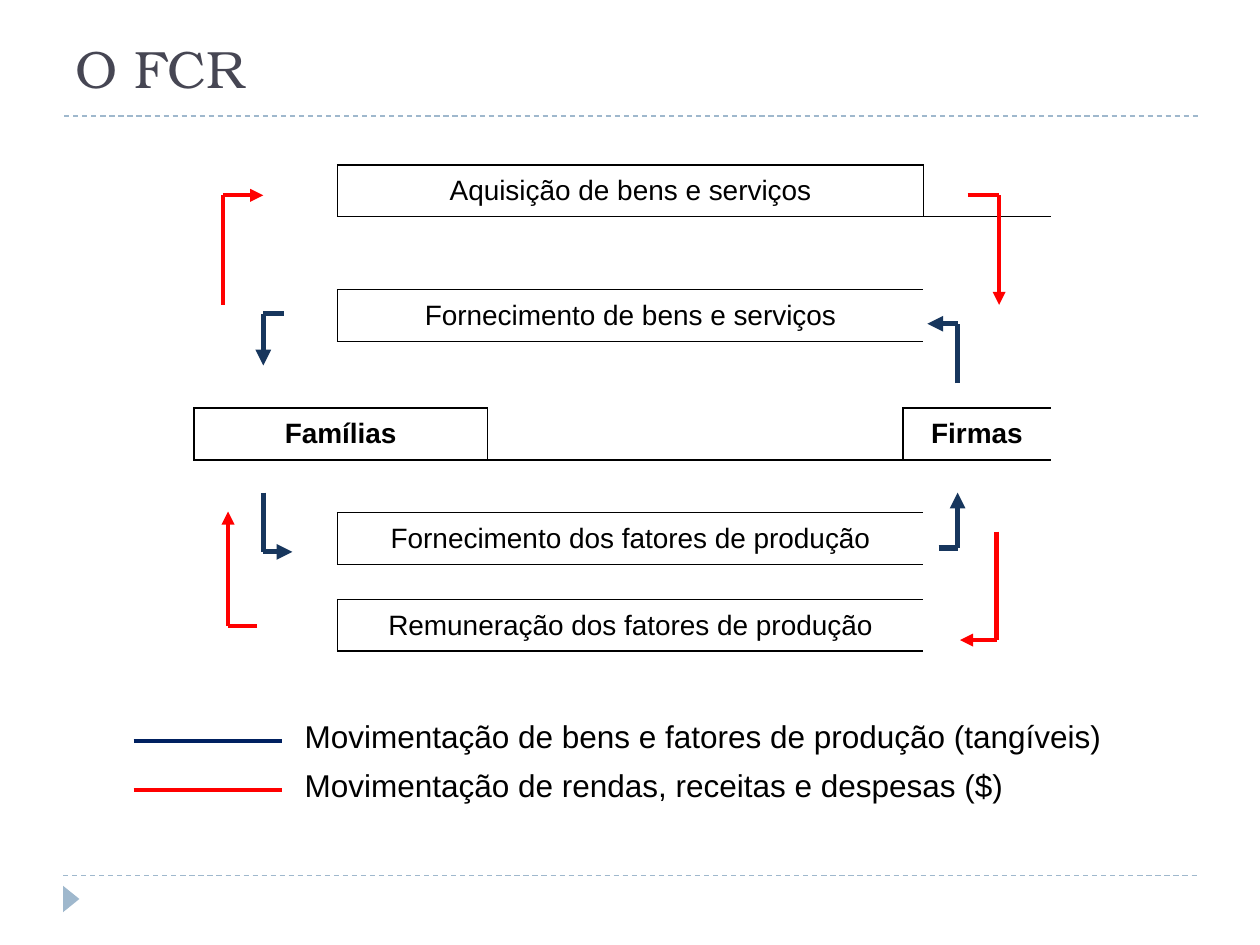
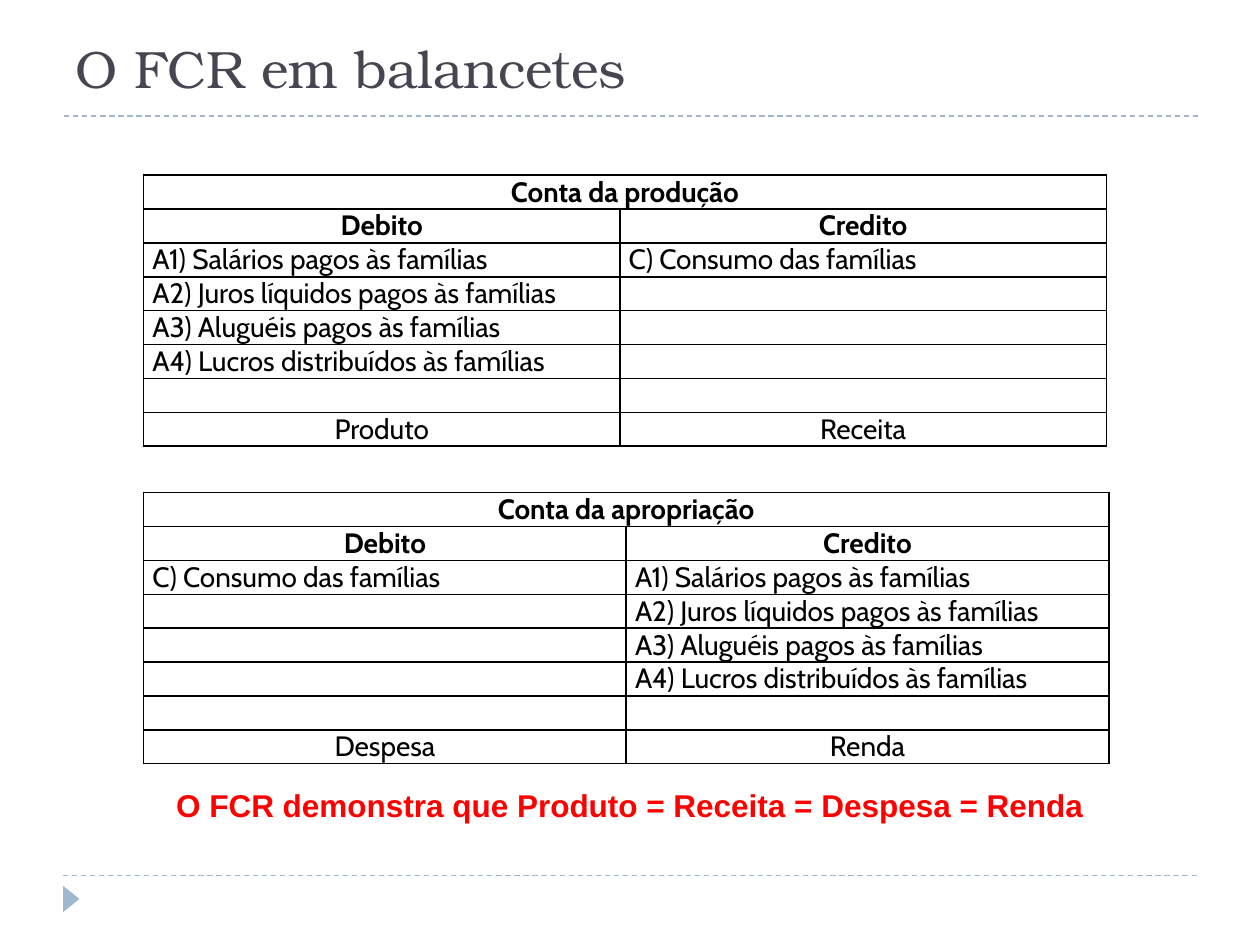
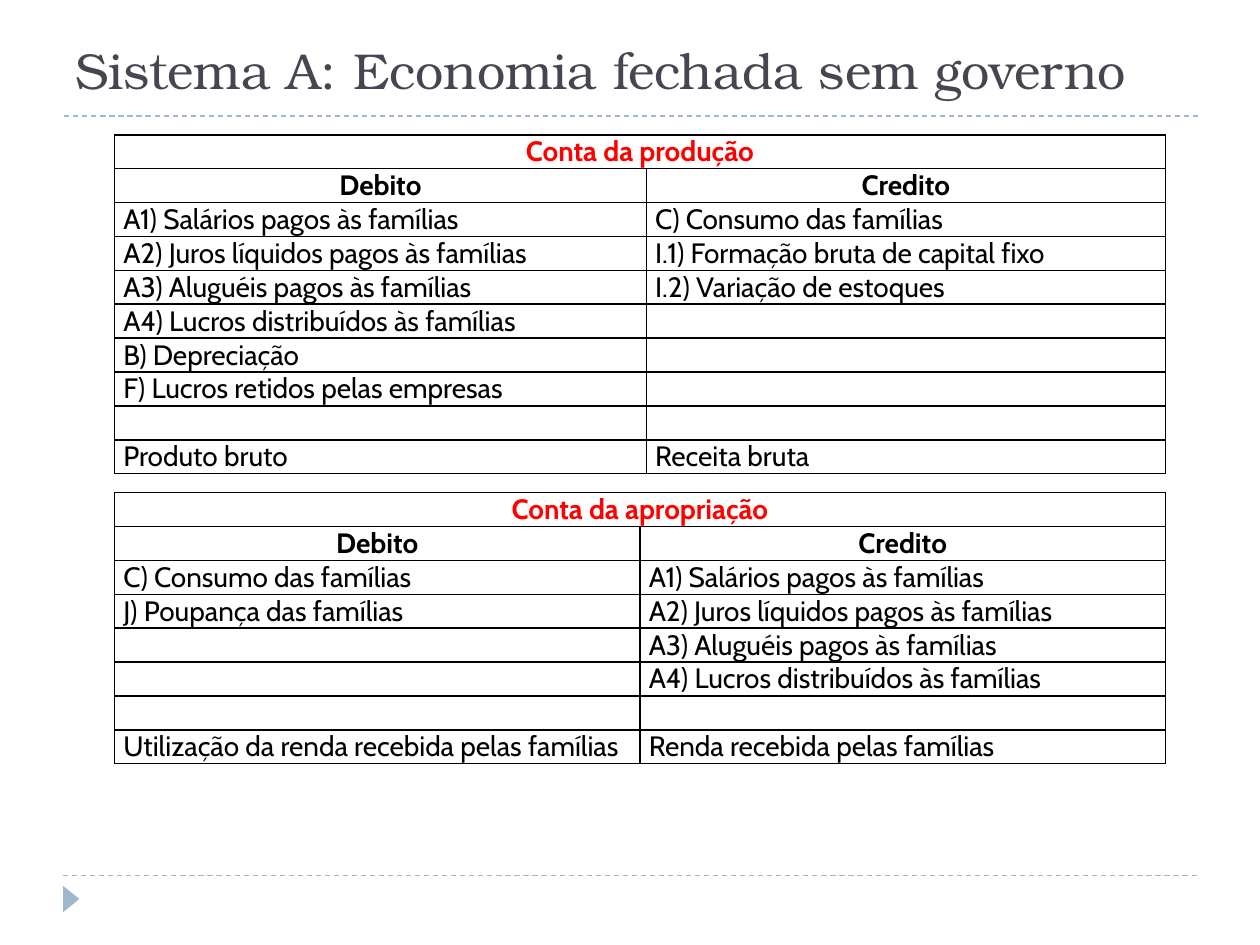
from lxml.etree import SubElement
from pptx import Presentation
from pptx.dml.color import RGBColor
from pptx.enum.dml import MSO_LINE
from pptx.enum.shapes import MSO_CONNECTOR, MSO_SHAPE
from pptx.enum.text import MSO_ANCHOR, MSO_AUTO_SIZE, PP_ALIGN
from pptx.oxml.ns import qn
from pptx.util import Inches, Pt

BLACK, RED, NAVY, DEEP = "000000", "FF0000", "17365D", "002060"
PALE, SLATE = "9FB8CD", "464653"
SERIF, SANS, CABIN = "TeX Gyre Bonum", "Arial", "Cabin"
SIDES = "LRTB"
MIRROR = {"L": (0, -1, "R"), "R": (0, 1, "L"), "T": (-1, 0, "B"), "B": (1, 0, "T")}
PAD = {"margin_left": Inches(0.07), "margin_right": Inches(0.07),
       "margin_top": 0, "margin_bottom": 0}
WAGES = ["A1) Salários pagos às famílias", "A2) Juros líquidos pagos às famílias",
         "A3) Aluguéis pagos às famílias", "A4) Lucros distribuídos às famílias"]
SPEND = "C) Consumo das famílias"


def tint(code):
    return RGBColor.from_string(code)


def apply(item, values):
    for name, value in values.items():
        setattr(item, name, value)


def write(para, text, size, face, color=BLACK, bold=False, align=PP_ALIGN.LEFT):
    para.alignment = align
    run = para.add_run()
    run.text = text
    apply(run.font, {"size": Pt(size), "name": face, "bold": bold})
    run.font.color.rgb = tint(color)


def draw_line(slide, start, end, color, width, arrow=False, dash=None):
    line = slide.shapes.add_connector(
        MSO_CONNECTOR.STRAIGHT, *[Inches(n) for n in (*start, *end)])
    apply(line.line, {"width": Pt(width), "dash_style": dash})
    line.line.color.rgb = tint(color)
    props = line.element.spPr
    if arrow:
        SubElement(props.find(qn("a:ln")), qn("a:tailEnd"), type="triangle")
    SubElement(props, qn("a:effectLst"))
    return line


def draw_bend(slide, color, width, start, turn, end):
    draw_line(slide, start, turn, color, width)
    draw_line(slide, turn, end, color, width, arrow=True)


def add_label(slide, left, top, width, text, color=BLACK, bold=False):
    box = slide.shapes.add_textbox(*[Inches(n) for n in (left, top, width, 0.4)])
    apply(box.text_frame, {"word_wrap": True, "auto_size": MSO_AUTO_SIZE.SHAPE_TO_FIT_TEXT})
    write(box.text_frame.paragraphs[0], text, 18, SANS, color, bold)


def add_title(slide, text, size=30):
    frame = slide.shapes.title.text_frame
    frame.vertical_anchor = MSO_ANCHOR.BOTTOM
    write(frame.paragraphs[0], text, size, SERIF, SLATE)


def set_layout(deck, layout):
    for holder in list(layout.placeholders):
        if holder.placeholder_format.idx:
            holder.element.getparent().remove(holder.element)
    apply(layout.placeholders[0], {"left": Inches(0.5), "top": Inches(0.17),
                                   "width": Inches(9), "height": Inches(0.67)})
    slide = deck.slides.add_slide(layout)
    parts = [draw_line(slide, (x, y), (x + 9, y), PALE, 0.75, dash=MSO_LINE.DASH)
             for x, y in ((0.5, 6.95), (0.51, 0.92))]
    mark = slide.shapes.add_shape(
        MSO_SHAPE.ISOSCELES_TRIANGLE, *[Inches(n) for n in (0.46, 7.07, 0.21, 0.13)])
    mark.rotation = 90
    mark.shadow.inherit = False
    mark.fill.solid()
    mark.fill.fore_color.rgb = tint(PALE)
    mark.line.fill.background()
    for part in parts + [mark]:
        layout.shapes.element.append(part.element)
    return slide


def format_cell(cell, edges, size, face):
    apply(cell, PAD)
    props = cell._tc.get_or_add_tcPr()
    for side in SIDES:
        line = SubElement(props, qn("a:ln" + side), w=str(Pt(1)))
        if side in edges:
            SubElement(SubElement(line, qn("a:solidFill")), qn("a:srgbClr"), val=BLACK)
        else:
            SubElement(line, qn("a:noFill"))
    cell.fill.background()
    para = cell.text_frame.paragraphs[0]
    if not para.runs:
        last = SubElement(para._p, qn("a:endParaRPr"), sz=str(size * 100))
        SubElement(last, qn("a:latin"), typeface=face)


def add_grid(slide, left, top, cols, rows):
    frame = slide.shapes.add_table(
        len(rows), len(cols), *[Inches(n) for n in (left, top, sum(cols), sum(rows))])
    table = frame.table
    apply(table, {"first_row": False, "horz_banding": False})
    for col, width in zip(table.columns, cols):
        col.width = Inches(width)
    for row, height in zip(table.rows, rows):
        row.height = Inches(height)
    return table


def add_account(slide, left, top, cols, name, debit, credit, total,
                color=BLACK, align=PP_ALIGN.CENTER):
    count = max(len(debit), len(credit)) + 1
    pairs = [[items[i] if i < len(items) else "" for items in (debit, credit)]
             for i in range(count)]
    lines = [(name, ""), ("Debito", "Credito"), *pairs, total]
    table = add_grid(slide, left, top, cols, [2.13 / 8] * len(lines))
    table.cell(0, 0).merge(table.cell(0, 1))
    for r, line in enumerate(lines):
        head = r < 2
        place = (PP_ALIGN.CENTER if head else
                 align if r == len(lines) - 1 else PP_ALIGN.JUSTIFY)
        for c, text in enumerate(line):
            cell = table.cell(r, c)
            if text:
                write(cell.text_frame.paragraphs[0], text, 16, CABIN,
                      BLACK if r else color, head, place)
            format_cell(cell, SIDES, 16, CABIN)


def add_flow(slide):
    boxes = [(0, 1, 4, "Aquisição de bens e serviços", True, False),
             (3, 1, 4, "Fornecimento de bens e serviços", False, False),
             (5, 0, 2, "Famílias", True, True),
             (5, 4, 5, "Firmas", True, True),
             (7, 1, 4, "Fornecimento dos fatores de produção", False, False),
             (9, 1, 4, "Remuneração dos fatores de produção", False, False)]
    blanks = [(0, 0, 4, 0), (1, 2, 1, 5), (2, 1, 2, 4), (2, 5, 4, 5), (4, 1, 4, 4),
              (6, 0, 9, 0), (6, 1, 6, 4), (6, 5, 7, 5), (8, 1, 8, 4), (8, 5, 9, 5)]
    table = add_grid(slide, 1.54, 1.31, [1.14, 1.01, 0.16, 3.3, 0.16, 1.01],
                     [0.41, 0.3, 0.28, 0.41, 0.53, 0.41, 0.42, 0.41, 0.28, 0.41])
    for r, c, low, far in blanks:
        table.cell(r, c).merge(table.cell(low, far))
    edges = {(0, 5, "B"), (5, 3, "B")}
    for r, first, last, text, closed, bold in boxes:
        cell = table.cell(r, first)
        cell.merge(table.cell(r, last))
        cell.vertical_anchor = MSO_ANCHOR.MIDDLE
        write(cell.text_frame.paragraphs[0], text, 16, SANS, BLACK, bold, PP_ALIGN.CENTER)
        edges |= {(r, c, side) for c in range(first, last + 1) for side in "TB"}
        edges.add((r, first, "L"))
        if closed:
            edges.add((r, last, "R"))
    for r, c, side in list(edges):
        down, over, other = MIRROR[side]
        edges.add((r + down, c + over, other))
    for r in range(len(table.rows)):
        for c in range(len(table.columns)):
            shown = [side for side in SIDES if (r, c, side) in edges]
            format_cell(table.cell(r, c), shown, 10, SANS)


def add_bends(slide):
    bends = {(RED, 2.5): [((7.68, 1.55), (7.93, 1.55), (7.93, 2.42)),
                          ((7.91, 4.22), (7.91, 5.08), (7.62, 5.08)),
                          ((2.04, 4.97), (1.81, 4.97), (1.81, 4.06)),
                          ((1.77, 2.42), (1.77, 1.55), (2.09, 1.55))],
             (NAVY, 3): [((2.25, 2.49), (2.09, 2.49), (2.09, 2.9)),
                         ((7.6, 3.04), (7.6, 2.57), (7.36, 2.57)),
                         ((2.09, 3.91), (2.09, 4.38), (2.32, 4.38)),
                         ((7.45, 4.35), (7.6, 4.35), (7.6, 3.91))]}
    for (color, width), routes in bends.items():
        for route in routes:
            draw_bend(slide, color, width, *route)


def add_legend(slide):
    notes = [(DEEP, "Movimentação de bens e fatores de produção (tangíveis)"),
             (RED, "Movimentação de rendas, receitas e despesas ($)")]
    for i, (color, text) in enumerate(notes):
        y = 5.88 + 0.39 * i
        draw_line(slide, (1.06, y), (2.24, y), color, 2.5)
        add_label(slide, 2.32, y - 0.24, 6.7, text)


def main():
    deck = Presentation()
    apply(deck, {"slide_width": Inches(10), "slide_height": Inches(7.5)})
    layout = deck.slide_layouts[5]

    slide = set_layout(deck, layout)
    add_title(slide, "O FCR")
    add_flow(slide)
    add_bends(slide)
    add_legend(slide)

    slide = deck.slides.add_slide(layout)
    add_title(slide, "O FCR em balancetes")
    add_account(slide, 1.14, 3.91, [3.83, 3.83], "Conta da apropriação",
                [SPEND], WAGES, ("Despesa", "Renda"))
    add_account(slide, 1.14, 1.39, [3.78, 3.86], "Conta da produção",
                WAGES, [SPEND], ("Produto", "Receita"))
    add_label(slide, 1.3, 6.19, 7.64,
              "O FCR demonstra que Produto = Receita = Despesa = Renda", RED, True)

    slide = deck.slides.add_slide(layout)
    add_title(slide, "Sistema A: Economia fechada sem governo", 28.8)
    add_account(slide, 0.91, 1.07, [4.22, 4.12], "Conta da produção",
                WAGES + ["B) Depreciação", "F) Lucros retidos pelas empresas"],
                [SPEND, "I.1) Formação bruta de capital fixo", "I.2) Variação de estoques"],
                ("Produto bruto", "Receita bruta"), RED, PP_ALIGN.LEFT)
    add_account(slide, 0.91, 3.91, [4.17, 4.17], "Conta da apropriação",
                [SPEND, "J) Poupança das famílias"], WAGES,
                ("Utilização da renda recebida pelas famílias",
                 "Renda recebida pelas famílias"), RED, PP_ALIGN.JUSTIFY)
    deck.save("out.pptx")


if __name__ == "__main__":
    main()
